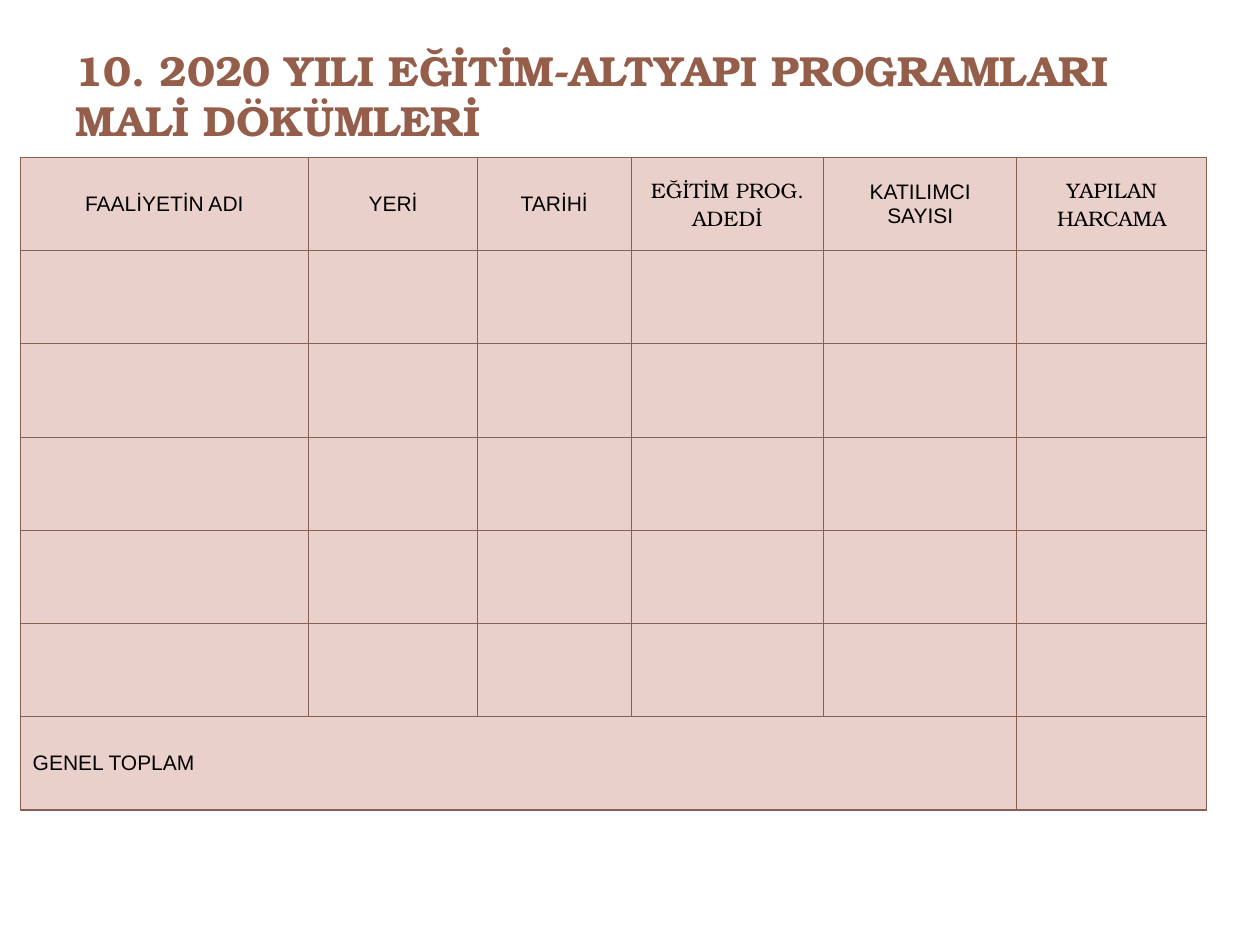
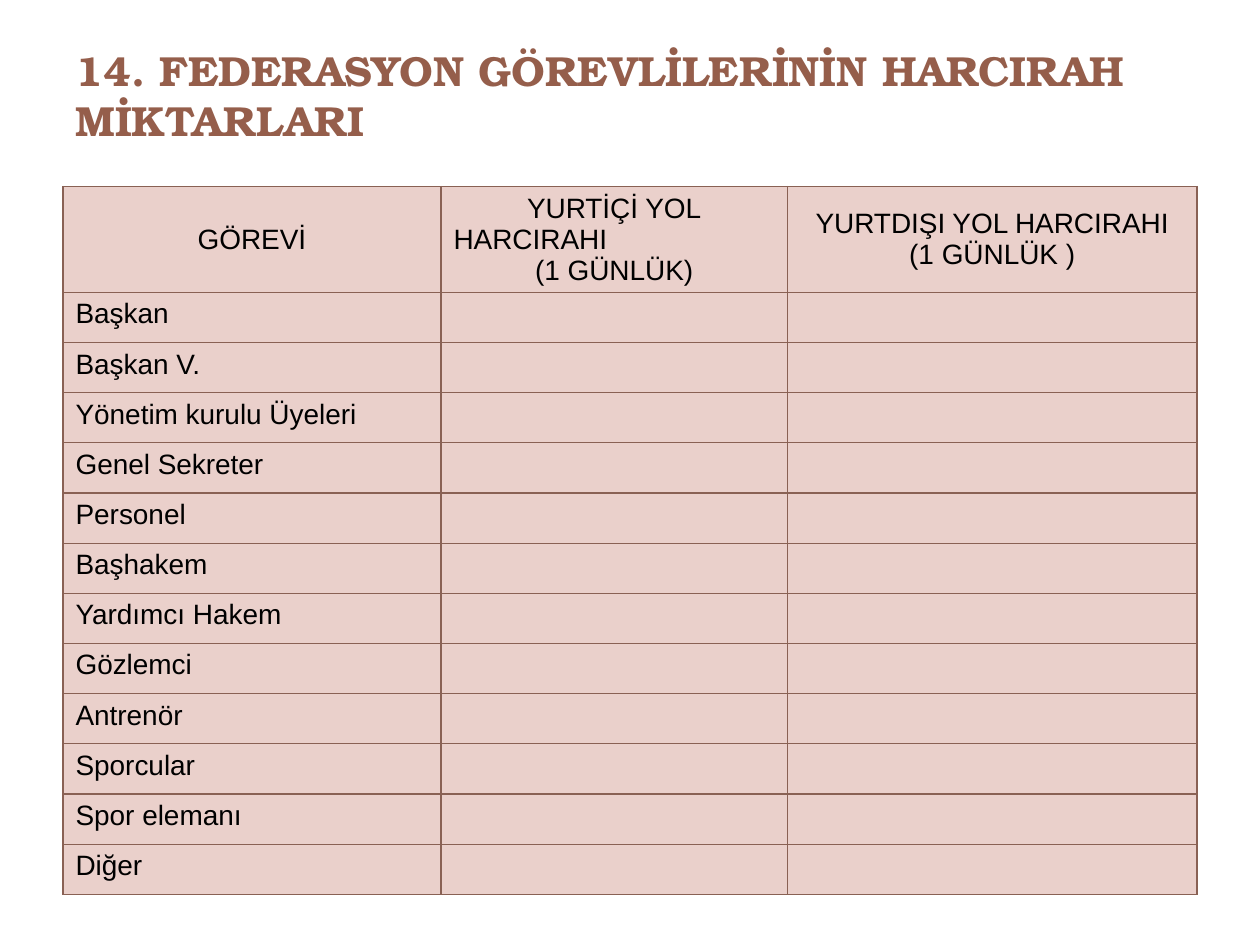
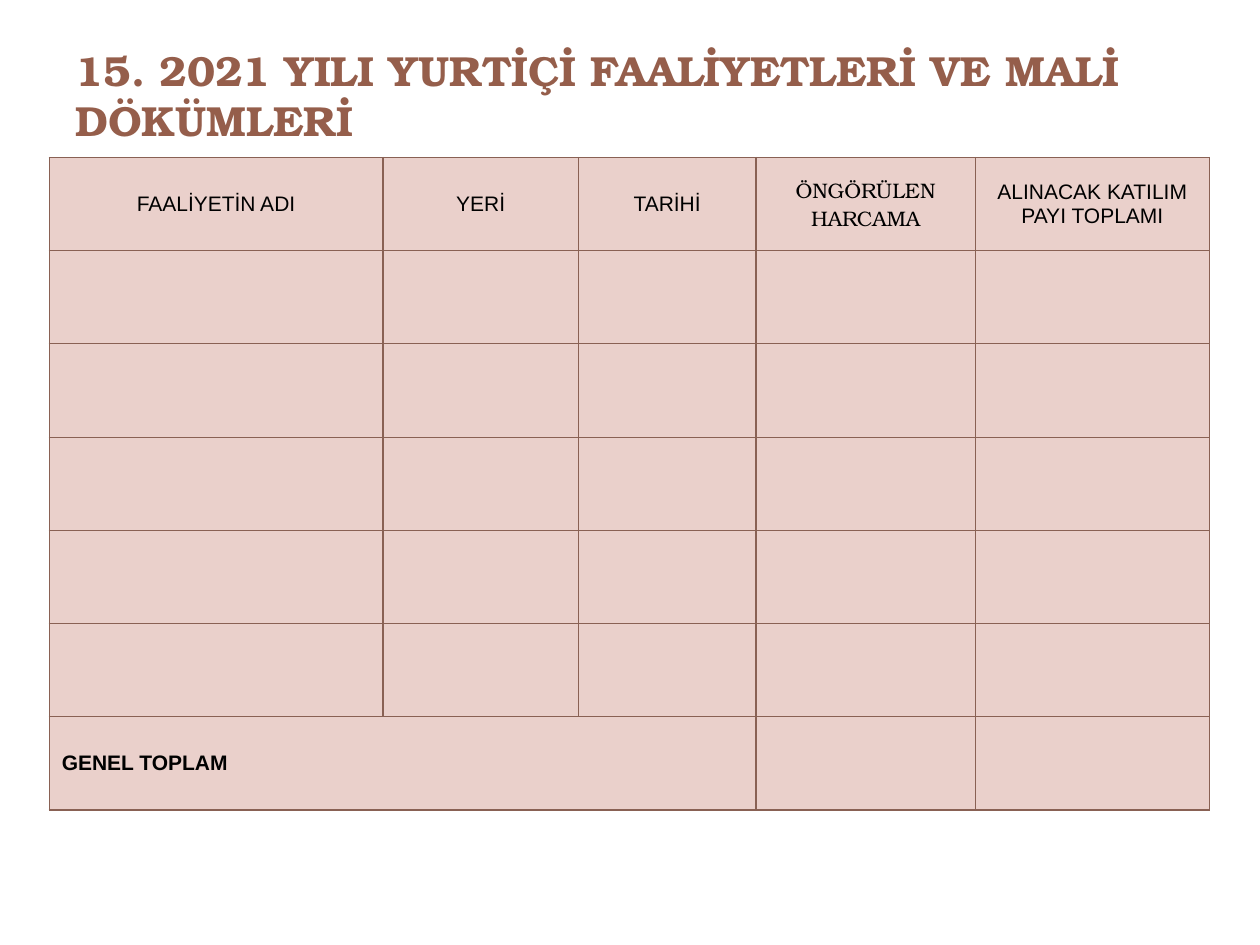
from dataclasses import dataclass

from lxml.etree import SubElement
from pptx import Presentation
from pptx.dml.color import RGBColor
from pptx.enum.text import MSO_ANCHOR as Anchor, MSO_AUTO_SIZE as AutoSize, PP_ALIGN as Align
from pptx.oxml.ns import qn
from pptx.util import Inches, Pt


@dataclass(frozen=True)
class Theme:
    """Colours, fonts and type sizes shared by the slides."""
    title_color: str = "955E4B"
    text_color: str = "000000"
    cell_fill: str = "EAD0CB"
    border_color: str = "896154"
    border_width: float = 0.75
    serif: str = "TeX Gyre Bonum"
    sans: str = "Arial"
    title_size: int = 24
    list_size: int = 16
    cell_size: int = 12


THEME = Theme()
TOTAL_LABEL = "GENEL TOPLAM"
STAFF_ROLES = ["Başkan", "Başkan V.", "Yönetim kurulu Üyeleri", "Genel Sekreter",
               "Personel", "Başhakem", "Yardımcı Hakem", "Gözlemci", "Antrenör",
               "Sporcular", "Spor elemanı", "Diğer"]


def write_text(paragraph, text, *, size, font=THEME.sans, color=THEME.text_color,
               bold=False, align=Align.LEFT):
    """Fill a paragraph with formatted text, or size it when it is empty."""
    paragraph.alignment = align
    if not text:
        SubElement(paragraph._p, qn("a:endParaRPr"), sz=str(Pt(size).centipoints))
        return
    paragraph.text = text
    for run in paragraph.runs:
        run.font.size = Pt(size)
        run.font.name = font
        run.font.bold = bold
        run.font.color.rgb = RGBColor.from_string(color)


def add_titled_slide(presentation, title, *, width=9, height=0.77):
    """Add a slide with the shared title style."""
    slide = presentation.slides.add_slide(presentation.slide_layouts[5])
    shape = slide.shapes.title
    shape.left, shape.top = Inches(0.5), Inches(0.3)
    shape.width, shape.height = Inches(width), Inches(height)
    frame = shape.text_frame
    frame.word_wrap = True
    frame.auto_size = AutoSize.NONE
    frame.vertical_anchor = Anchor.TOP
    write_text(frame.paragraphs[0], title, size=THEME.title_size, font=THEME.serif,
               color=THEME.title_color, bold=True)
    return slide


def style_cell(cell):
    """Give a cell the shared borders and fill."""
    properties = cell._tc.get_or_add_tcPr()
    for side in ("lnL", "lnR", "lnT", "lnB"):
        line = SubElement(properties, qn(f"a:{side}"), w=str(Pt(THEME.border_width)))
        fill = SubElement(line, qn("a:solidFill"))
        SubElement(fill, qn("a:srgbClr"), val=THEME.border_color)
    cell.fill.solid()
    cell.fill.fore_color.rgb = RGBColor.from_string(THEME.cell_fill)


def add_form_table(slide, *, left, top, column_widths, row_heights, size):
    """Add an empty styled table whose blank cells keep the given type size."""
    frame = slide.shapes.add_table(
        len(row_heights), len(column_widths), Inches(left), Inches(top),
        Inches(sum(column_widths)), Inches(sum(row_heights)))
    table = frame.table
    for column, width in zip(table.columns, column_widths):
        column.width = Inches(width)
    for row, height in zip(table.rows, row_heights):
        row.height = Inches(height)
    for cell in table.iter_cells():
        style_cell(cell)
        write_text(cell.text_frame.paragraphs[0], "", size=size)
    return table


def fill_cell(cell, lines, *, anchor=Anchor.MIDDLE, **text_format):
    """Write (text, alignment) lines into a cell, one paragraph each."""
    cell.vertical_anchor = anchor
    frame = cell.text_frame
    frame.clear()
    for index, (text, align) in enumerate(lines):
        paragraph = frame.paragraphs[0] if index == 0 else frame.add_paragraph()
        write_text(paragraph, text, align=align, **text_format)


def add_budget_table(slide, *, left, column_widths, headings, total_span, total_bold=False):
    """Add a budget form with a heading row, five blank rows and a total row."""
    table = add_form_table(slide, left=left, top=1.25, column_widths=column_widths,
                           row_heights=[0.74] * 7, size=THEME.cell_size)
    for column, (heading, font) in enumerate(headings):
        fill_cell(table.cell(0, column), [(heading, Align.CENTER)],
                  size=THEME.cell_size, font=font)
    total_cell = table.cell(6, 0)
    total_cell.merge(table.cell(6, total_span - 1))
    fill_cell(total_cell, [(TOTAL_LABEL, Align.LEFT)], size=THEME.cell_size, bold=total_bold)


def add_allowance_table(slide):
    """Add the daily travel allowance form, one row per role."""
    heading_height, table_height = 0.84, 5.62
    role_height = (table_height - heading_height) / len(STAFF_ROLES)
    table = add_form_table(slide, left=0.5, top=1.48, column_widths=[3, 2.75, 3.25],
                           row_heights=[heading_height] + [role_height] * len(STAFF_ROLES),
                           size=THEME.list_size)
    headings = [
        [("GÖREVİ", Align.CENTER)],
        [("YURTİÇİ YOL", Align.CENTER), ("HARCIRAHI", Align.LEFT), ("(1 GÜNLÜK)", Align.CENTER)],
        [("YURTDIŞI YOL HARCIRAHI", Align.CENTER), ("(1 GÜNLÜK )", Align.CENTER)],
    ]
    for column, lines in enumerate(headings):
        fill_cell(table.cell(0, column), lines, size=THEME.list_size)
    for row, role in enumerate(STAFF_ROLES, start=1):
        fill_cell(table.cell(row, 0), [(role, Align.LEFT)], anchor=Anchor.TOP,
                  size=THEME.list_size)


def main():
    """Build the three slides and save them."""
    presentation = Presentation()
    presentation.slide_width, presentation.slide_height = Inches(10), Inches(7.5)

    training = add_titled_slide(
        presentation, "10. 2020 YILI EĞİTİM-ALTYAPI PROGRAMLARI MALİ DÖKÜMLERİ")
    common_headings = [("FAALİYETİN ADI", THEME.sans), ("YERİ", THEME.sans),
                       ("TARİHİ", THEME.sans)]
    add_budget_table(
        training, left=0.16, column_widths=[2.29, 1.34, 1.22, 1.53, 1.53, 1.51],
        headings=common_headings + [("EĞİTİM PROG. ADEDİ", THEME.serif),
                                    ("KATILIMCI SAYISI", THEME.sans),
                                    ("YAPILAN HARCAMA", THEME.serif)],
        total_span=5)

    allowances = add_titled_slide(
        presentation, "14. FEDERASYON GÖREVLİLERİNİN HARCIRAH MİKTARLARI", height=1.25)
    add_allowance_table(allowances)

    domestic = add_titled_slide(
        presentation, "15. 2021 YILI YURTİÇİ FAALİYETLERİ VE MALİ DÖKÜMLERİ",
        width=9.5, height=0.87)
    add_budget_table(
        domestic, left=0.39, column_widths=[2.65, 1.55, 1.41, 1.74, 1.86],
        headings=common_headings + [("ÖNGÖRÜLEN HARCAMA", THEME.serif),
                                    ("ALINACAK KATILIM PAYI TOPLAMI", THEME.sans)],
        total_span=3, total_bold=True)

    presentation.save("out.pptx")


if __name__ == "__main__":
    main()
